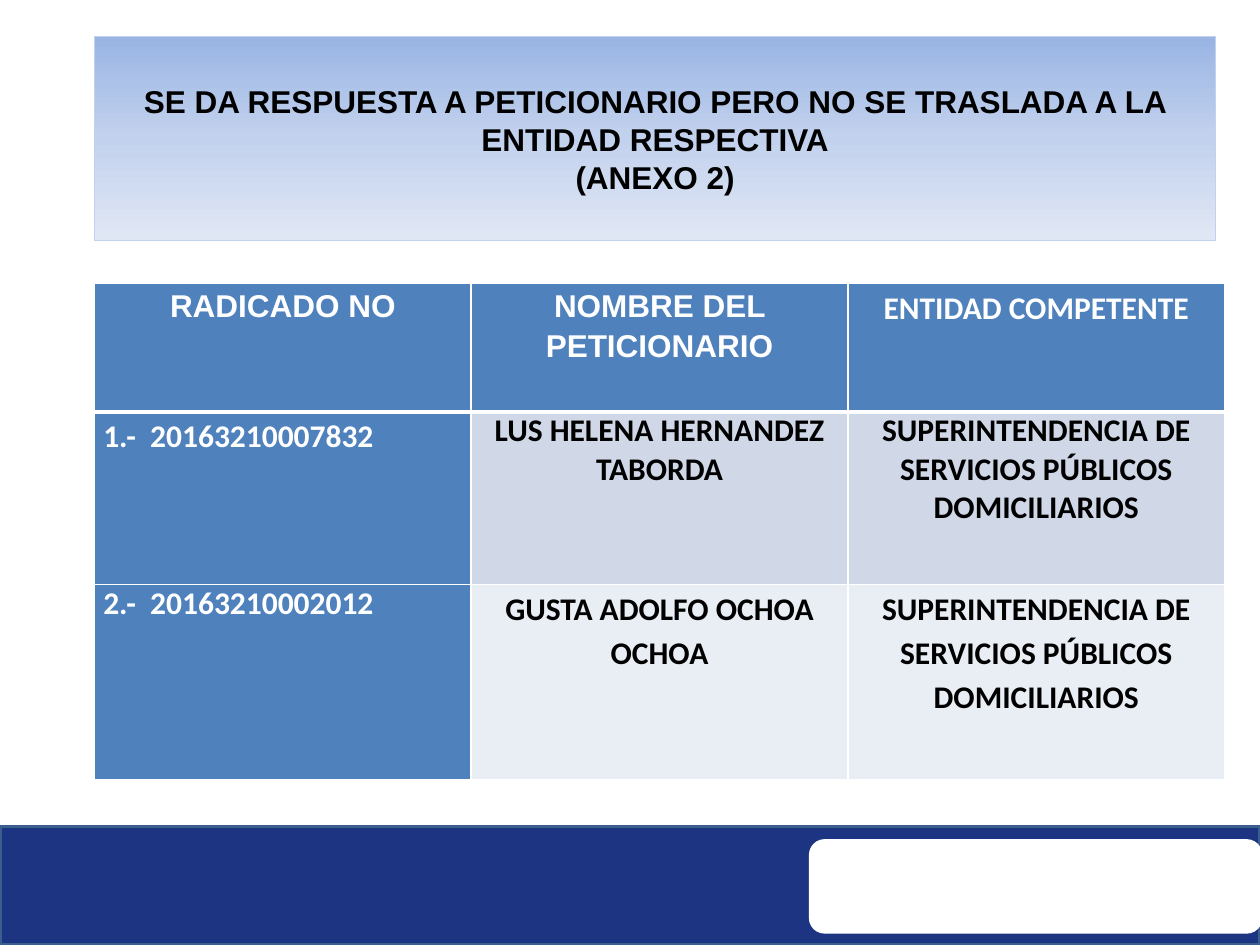
from copy import deepcopy
from pptx import Presentation
from pptx.dml.color import RGBColor
from pptx.enum.shapes import MSO_SHAPE as Shape
from pptx.enum.text import MSO_ANCHOR as Anchor, PP_ALIGN as Align
from pptx.oxml.ns import qn
from pptx.oxml.xmlchemy import OxmlElement
from pptx.util import Inches, Pt

COLORS = {
    "navy": "1C3481", "navy_edge": "3A5F8C", "white": "FFFFFF", "black": "000000",
    "blue": "4F81BD", "band_dark": "D0D8E8", "band_light": "E9EDF4",
    "title_top": "9AB5E4", "title_mid": "C2D1ED", "title_end": "E1E8F5",
}
TITLE = [
    "SE DA RESPUESTA A PETICIONARIO PERO NO SE TRASLADA A LA ENTIDAD RESPECTIVA",
    "(ANEXO 2)",
]
GRADIENT = [(0, "title_top"), (0.5, "title_mid"), (1, "title_end")]
ENTITY = "SUPERINTENDENCIA DE SERVICIOS PÚBLICOS DOMICILIARIOS"
ROWS = [
    ["RADICADO NO", "NOMBRE DEL PETICIONARIO", "ENTIDAD COMPETENTE"],
    ["1.-  20163210007832", "LUS HELENA HERNANDEZ TABORDA", ENTITY],
    ["2.-  20163210002012", "GUSTA ADOLFO OCHOA OCHOA", ENTITY],
]
ROW_HEIGHTS = [1.02, 1.37, 1.55]
ROW_FILLS = ["blue", "band_dark", "band_light"]
SPACING = [[1.15, 1.15, 1.15], [1.15, 1, 1], [1, 1.15, 1.15]]
COLUMN_WIDTH = 2.99
CELL_MARGINS = {"margin_left": 0.07, "margin_right": 0.07, "margin_top": 0, "margin_bottom": 0}


def rgb(name):
    return RGBColor.from_string(COLORS[name])


def write(paragraph, text, color, font="Arial", align=Align.CENTER, spacing=None):
    paragraph.alignment = align
    paragraph.line_spacing = spacing
    run = paragraph.add_run()
    run.text = text
    for key, value in {"name": font, "size": Pt(18), "bold": True}.items():
        setattr(run.font, key, value)
    run.font.color.rgb = rgb(color)


def add_panel(slide, preset, box, fill=None, line=None, width=0):
    panel = slide.shapes.add_shape(preset, *map(Inches, box))
    panel.shadow.inherit = False
    if fill:
        panel.fill.solid()
        panel.fill.fore_color.rgb = rgb(fill)
    if line:
        panel.line.color.rgb = rgb(line)
        panel.line.width = Pt(width)
    else:
        panel.line.fill.background()
    return panel


def add_border(cell, side, points):
    border = OxmlElement(f"a:{side}")
    border.set("w", str(Pt(points)))
    solid = OxmlElement("a:solidFill")
    color = OxmlElement("a:srgbClr")
    color.set("val", COLORS["white"])
    solid.append(color)
    border.append(solid)
    cell._tc.get_or_add_tcPr().append(border)


def add_title(slide):
    banner = add_panel(slide, Shape.RECTANGLE, (0.75, 0.29, 8.9, 1.62), line="title_mid", width=0.75)
    banner.fill.gradient()
    banner.fill.gradient_angle = 270
    stop_list = banner._element.spPr.find(".//" + qn("a:gsLst"))
    stop_list.insert(1, deepcopy(stop_list[0]))
    for stop, (position, color) in zip(banner.fill.gradient_stops, GRADIENT):
        stop.position = position
        stop.color.rgb = rgb(color)
    frame = banner.text_frame
    frame.word_wrap = True
    frame.vertical_anchor = Anchor.MIDDLE
    for i, text in enumerate(TITLE):
        write(frame.add_paragraph() if i else frame.paragraphs[0], text, "black")


def add_petitions(slide):
    box = (0.75, 2.25, COLUMN_WIDTH * len(ROWS[0]), sum(ROW_HEIGHTS))
    table = slide.shapes.add_table(len(ROWS), len(ROWS[0]), *map(Inches, box)).table
    for column in table.columns:
        column.width = Inches(COLUMN_WIDTH)
    for r, texts in enumerate(ROWS):
        table.rows[r].height = Inches(ROW_HEIGHTS[r])
        for c, text in enumerate(texts):
            cell = table.cell(r, c)
            for key, value in CELL_MARGINS.items():
                setattr(cell, key, Inches(value))
            for side in ("lnL", "lnR", "lnT", "lnB"):
                under_header = (r, side) in ((0, "lnB"), (1, "lnT"))
                add_border(cell, side, 3 if under_header else 1)
            cell.fill.solid()
            cell.fill.fore_color.rgb = rgb(ROW_FILLS[r] if c else "blue")
            write(
                cell.text_frame.paragraphs[0], text,
                color="black" if r and c else "white",
                font="Arial" if r == 0 and c < 2 else "Calibri",
                align=Align.LEFT if r and c == 0 else Align.CENTER,
                spacing=SPACING[r][c],
            )


def main():
    deck = Presentation()
    deck.slide_width, deck.slide_height = Inches(10), Inches(7.5)
    slide = deck.slides.add_slide(deck.slide_layouts[6])
    add_panel(slide, Shape.RECTANGLE, (0, 6.56, 10, 0.94), "navy", "navy_edge", 2)
    add_panel(slide, Shape.ROUNDED_RECTANGLE, (6.42, 6.66, 3.6, 0.75), "white")
    add_petitions(slide)
    add_title(slide)
    deck.save("out.pptx")


if __name__ == "__main__":
    main()
